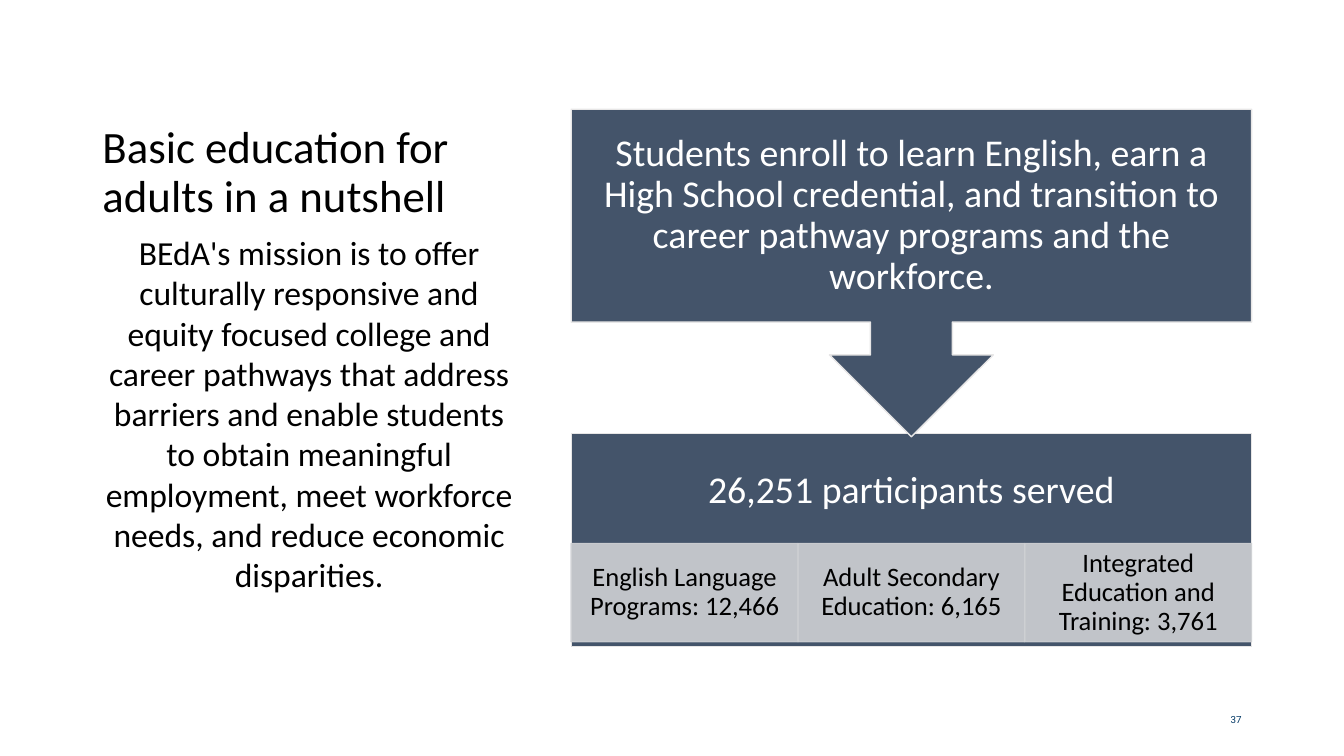
from pptx import Presentation
from pptx.dml.color import RGBColor
from pptx.enum.shapes import MSO_SHAPE
from pptx.enum.text import MSO_ANCHOR, MSO_AUTO_SIZE, PP_ALIGN
from pptx.oxml.ns import qn
from pptx.util import Inches, Pt
from lxml import etree

RECT, CALLOUT = MSO_SHAPE.RECTANGLE, MSO_SHAPE.DOWN_ARROW_CALLOUT
TOP, MIDDLE, BOTTOM = MSO_ANCHOR.TOP, MSO_ANCHOR.MIDDLE, MSO_ANCHOR.BOTTOM
LEFT, CENTER, RIGHT = PP_ALIGN.LEFT, PP_ALIGN.CENTER, PP_ALIGN.RIGHT

BLACK = RGBColor(0x00, 0x00, 0x00)
WHITE = RGBColor(0xFF, 0xFF, 0xFF)
SLATE = RGBColor(0x44, 0x54, 0x6A)
PALE = RGBColor(0xE7, 0xE6, 0xE6)
GREY = RGBColor(0xCF, 0xD1, 0xD4)
NAVY = RGBColor(0x00, 0x37, 0x64)

COLS, ROWS = 160, 90  # grid of the slide


def put_text(s, text, size=24, color=BLACK, font="Calibri", align=CENTER,
             anchor=MIDDLE, spacing=0.9, insets=(0.1, 0.05, 0.1, 0.05)):
    tf = s.text_frame
    tf.word_wrap = True
    tf.auto_size = MSO_AUTO_SIZE.NONE
    tf.vertical_anchor = anchor
    (tf.margin_left, tf.margin_top,
     tf.margin_right, tf.margin_bottom) = map(Inches, insets)
    p = tf.paragraphs[0]
    p.alignment, p.line_spacing = align, spacing
    r = p.add_run()
    r.text = text
    r.font.name, r.font.size = font, Pt(size)
    r.font.color.rgb = color


class Deck:
    """Holds the grid and the current slide."""

    def __init__(self, prs):
        self.unit_x = prs.slide_width / COLS
        self.unit_y = prs.slide_height / ROWS
        self.slide = prs.slides.add_slide(prs.slide_layouts[5])

    def box(self, col, row, width, height):
        return (int(col * self.unit_x), int(row * self.unit_y),
                int(width * self.unit_x), int(height * self.unit_y))

    def title(self, text, place, **style):
        s = self.slide.shapes.title
        s.left, s.top, s.width, s.height = self.box(*place)
        put_text(s, text, **style)

    def text(self, text, place, **style):
        put_text(self.slide.shapes.add_textbox(*self.box(*place)), text, **style)

    def shape(self, kind, text, place, fill=SLATE, line=PALE, alpha=None, **style):
        s = self.slide.shapes.add_shape(kind, *self.box(*place))
        s.shadow.inherit = False
        s.fill.solid()
        s.fill.fore_color.rgb = fill
        s.line.color.rgb = line
        s.line.width = Pt(1)
        if alpha is not None:
            for clr in s._element.spPr.iter(qn("a:srgbClr")):
                etree.SubElement(clr, qn("a:alpha")).set("val", str(alpha * 1000))
        put_text(s, text, **style)


def main():
    prs = Presentation()
    prs.slide_width, prs.slide_height = Inches(13.33), Inches(7.5)
    deck = Deck(prs)

    # Title and mission
    deck.title("Basic education for adults in a nutshell", (11, 6, 51.6, 21),
               size=32, align=LEFT, anchor=BOTTOM)
    deck.text("BEdA's mission is to offer culturally responsive and equity "
              "focused college and career pathways that address barriers and "
              "enable students to obtain meaningful employment, meet workforce "
              "needs, and reduce economic disparities.",
              (11, 27, 51.6, 50), anchor=TOP, spacing=1.0)

    # Participants panel, its heading kept above the programs
    left, width = 68, 81
    deck.shape(RECT, "26,251 participants served", (left, 51.6, width, 25.4),
               size=27, color=WHITE, insets=(0.21, 0.21, 0.21, 1.18))

    # Programs
    programs = ["English Language Programs: 12,466",
                "Adult Secondary Education: 6,165",
                "Integrated Education and Training: 3,761"]
    cell = width / len(programs)
    for i, program in enumerate(programs):
        deck.shape(RECT, program, (left + i * cell, 64.7, cell, 11.7),
                   fill=GREY, line=GREY, alpha=90, size=19,
                   insets=(0.15, 0.03, 0.15, 0.03))

    # Enrollment callout pointing to the panel
    deck.shape(CALLOUT, "Students enroll to learn English, earn a High School "
               "credential, and transition to career pathway programs and the "
               "workforce.", (left, 13, width, 39),
               size=27, color=WHITE, insets=(0.21,) * 4)

    # Slide number
    deck.text("37", (113, 83.4, 36, 4.8), size=7, color=NAVY, font="Roboto",
              align=RIGHT)

    prs.save("out.pptx")


if __name__ == "__main__":
    main()
